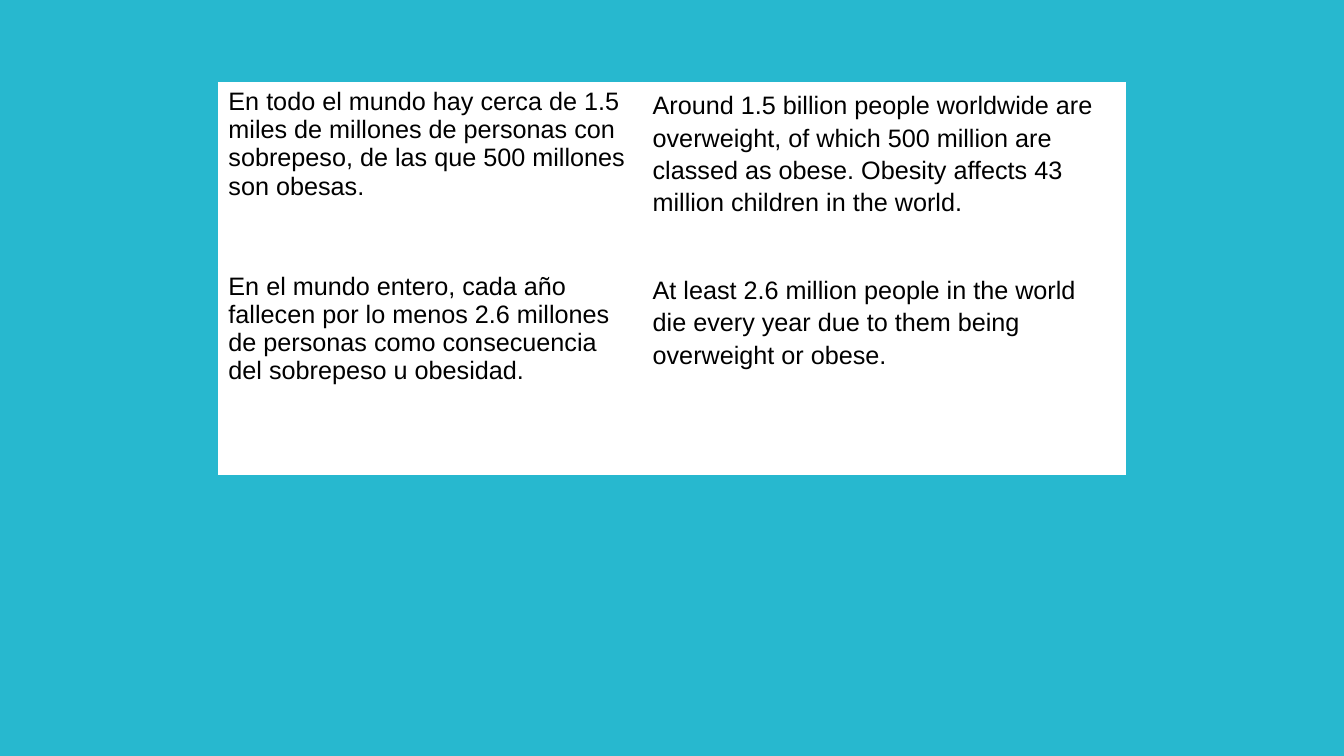
"""Build a slide with a Spanish and English table of obesity facts."""
from pptx import Presentation
from pptx.dml.color import RGBColor
from pptx.util import Pt

FACTS = [
    (
        "En todo el mundo hay cerca de 1.5 miles de millones de personas con "
        "sobrepeso, de las que 500 millones son obesas.",
        "Around 1.5 billion people worldwide are overweight, of which 500 million "
        "are classed as obese. Obesity affects 43 million children in the world.",
    ),
    (
        "En el mundo entero, cada año fallecen por lo menos 2.6 millones de "
        "personas como consecuencia del sobrepeso u obesidad.",
        "At least 2.6 million people in the world die every year due to them being "
        "overweight or obese.",
    ),
]
TEAL = RGBColor(0x27, 0xB8, 0xCF)
WHITE = RGBColor(0xFF, 0xFF, 0xFF)
BLACK = RGBColor(0x00, 0x00, 0x00)
TABLE_LEFT, TABLE_TOP = 156, 59
COLUMN_WIDTHS = (303, 345)
ROW_HEIGHTS = (132, 148)
LINE_SPACINGS = (1.0, 1.15)


def write_text(frame, content, size=18, font="Arial", color=BLACK, spacing=1.0):
    """Put one formatted paragraph in a text frame."""
    paragraph = frame.paragraphs[0]
    paragraph.line_spacing = spacing
    run = paragraph.add_run()
    run.text = content
    run.font.size = Pt(size)
    run.font.name = font
    run.font.color.rgb = color


def add_facts_table(slide):
    """Add the table with one language per column."""
    table = slide.shapes.add_table(
        len(FACTS), len(COLUMN_WIDTHS), Pt(TABLE_LEFT), Pt(TABLE_TOP),
        Pt(sum(COLUMN_WIDTHS)), Pt(sum(ROW_HEIGHTS)),
    ).table
    table.first_row = False
    table.horz_banding = False
    for column, width in zip(table.columns, COLUMN_WIDTHS):
        column.width = Pt(width)
    for row, height, fact in zip(table.rows, ROW_HEIGHTS, FACTS):
        row.height = Pt(height)
        for cell, content, spacing in zip(row.cells, fact, LINE_SPACINGS):
            cell.fill.solid()
            cell.fill.fore_color.rgb = WHITE
            write_text(cell.text_frame, content, spacing=spacing)


def main():
    """Create and save the presentation."""
    presentation = Presentation()
    presentation.slide_width, presentation.slide_height = Pt(960), Pt(540)
    slide = presentation.slides.add_slide(presentation.slide_layouts[6])
    slide.background.fill.solid()
    slide.background.fill.fore_color.rgb = TEAL
    add_facts_table(slide)
    presentation.save("out.pptx")


if __name__ == "__main__":
    main()
